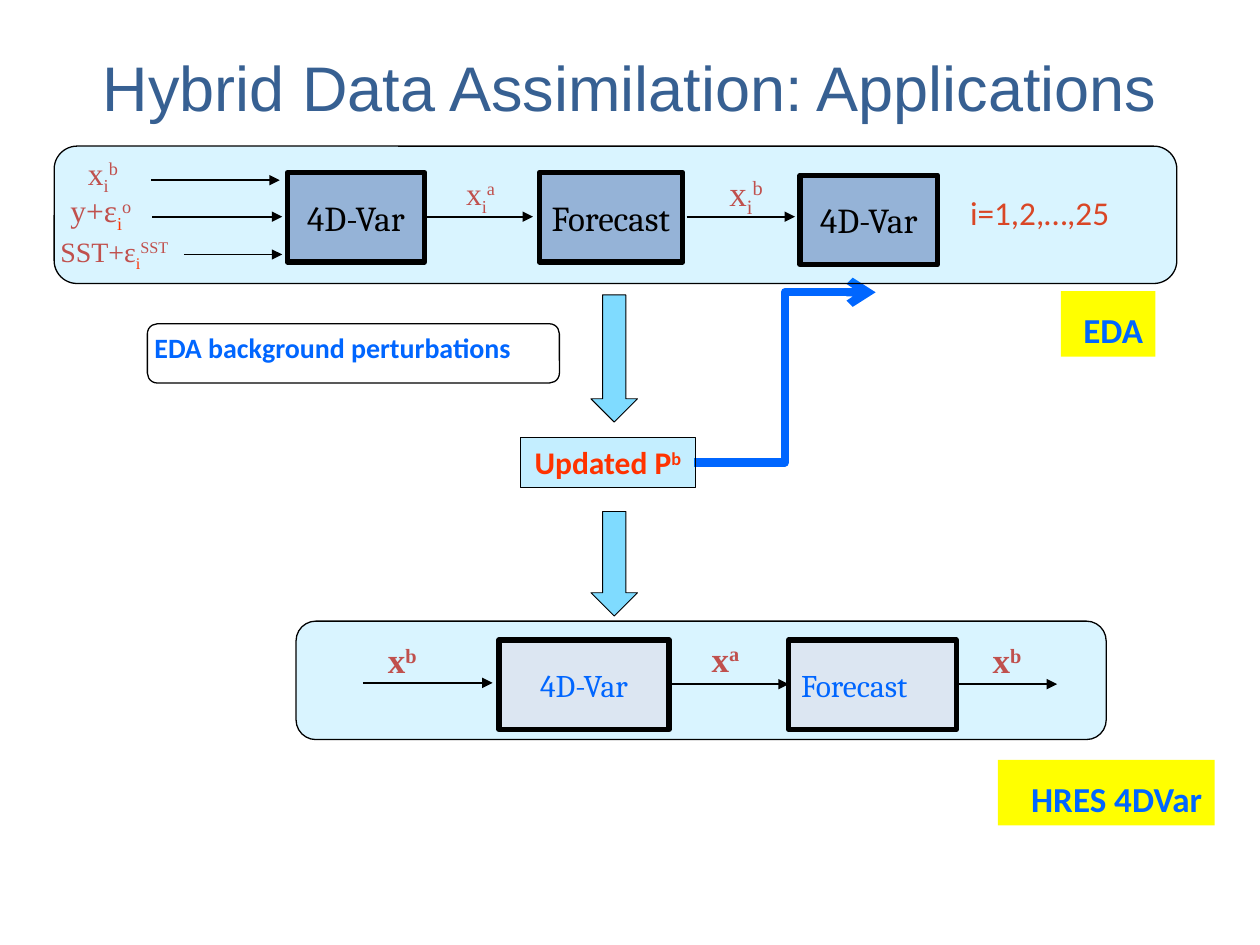
from dataclasses import dataclass

from lxml import etree
from pptx import Presentation
from pptx.dml.color import RGBColor
from pptx.enum.shapes import MSO_CONNECTOR, MSO_SHAPE
from pptx.enum.text import MSO_ANCHOR, PP_ALIGN
from pptx.oxml.ns import qn
from pptx.util import Inches, Pt

RECT, ROUNDED, DOWN = MSO_SHAPE.RECTANGLE, MSO_SHAPE.ROUNDED_RECTANGLE, MSO_SHAPE.DOWN_ARROW
STRAIGHT, ELBOW = MSO_CONNECTOR.STRAIGHT, MSO_CONNECTOR.ELBOW
LEFT, CENTER, RIGHT = PP_ALIGN.LEFT, PP_ALIGN.CENTER, PP_ALIGN.RIGHT
TOP, MIDDLE, BOTTOM = MSO_ANCHOR.TOP, MSO_ANCHOR.MIDDLE, MSO_ANCHOR.BOTTOM
SUB, SUP = -25, 30


@dataclass(frozen=True)
class Theme:
    title: str = "376092"
    black: str = "000000"
    blue: str = "0066FF"
    red: str = "FF3300"
    maroon: str = "C0504D"
    yellow: str = "FFFF00"
    cyan: str = "00B8FF"
    eda_box: str = "95B3D7"
    hres_box: str = "DCE6F2"
    title_font: str = "Arial"
    label_font: str = "Calibri"
    box_font: str = "Cambria"
    math_font: str = "Times New Roman"
    title_size: int = 36
    large: int = 20
    count_size: int = 19
    medium: int = 18
    small: int = 16


T = Theme()


def rgb(color):
    return RGBColor.from_string(color)


def write(sp, runs, size, font, color, bold=False, align=LEFT, anchor=TOP, wrap=False):
    """Fill a shape with runs: a string, or (text, baseline, colour) tuples."""
    if isinstance(runs, str):
        runs = [(runs, 0, color)]
    tf = sp.text_frame
    tf.word_wrap = wrap
    tf.vertical_anchor = anchor
    p = tf.paragraphs[0]
    p.alignment = align
    for text, baseline, run_color in runs:
        r = p.add_run()
        r.text = text
        r.font.size, r.font.name, r.font.bold = Pt(size), font, bold
        r.font.color.rgb = rgb(run_color)
        if baseline:
            r.font._element.set("baseline", str(baseline * 1000))


def add_label(s, at, runs, size, font, color, **style):
    write(s.shapes.add_textbox(*map(Inches, at)), runs, size, font, color, **style)


def add_symbol(s, at, base, sub="", sup="", size=T.medium, sub_color=T.maroon, **style):
    """Write a variable with its subscript and superscript."""
    parts = [(base, 0, T.maroon), (sub, SUB, sub_color), (sup, SUP, T.maroon)]
    add_label(s, at, [part for part in parts if part[0]], size, T.math_font, T.maroon, **style)


def add_block(s, kind, at, fill=None, alpha=100, line=None):
    sp = s.shapes.add_shape(kind, *map(Inches, at))
    sp.shadow.inherit = False
    if fill:
        sp.fill.solid()
        sp.fill.fore_color.rgb = rgb(fill)
        if alpha < 100:
            color = sp.fill._xPr.find(qn("a:solidFill"))[0]
            etree.SubElement(color, qn("a:alpha")).set("val", str(alpha * 1000))
    else:
        sp.fill.background()
    if line:
        sp.line.color.rgb = rgb(T.black)
        sp.line.width = Pt(line)
    else:
        sp.line.fill.background()
    return sp


def add_step(s, at, name, fill, size, color, align=CENTER):
    sp = add_block(s, RECT, at, fill, line=3)
    write(sp, name, size, T.box_font, color, align=align, anchor=MIDDLE)


def add_tag(s, at, name):
    sp = add_block(s, RECT, at, T.yellow)
    write(sp, name, T.large, T.label_font, T.blue, bold=True, align=RIGHT, anchor=BOTTOM)


def add_arrow(s, start, end, kind=STRAIGHT, color=T.black, width=1, head="triangle"):
    cx = s.shapes.add_connector(kind, *map(Inches, (*start, *end)))
    cx.line.color.rgb = rgb(color)
    cx.line.width = Pt(width)
    etree.SubElement(cx.line._get_or_add_ln(), qn("a:tailEnd")).set("type", head)
    etree.SubElement(cx._element.spPr, qn("a:effectLst"))


def add_title(s, text):
    sp = s.shapes.title
    sp.left, sp.top, sp.width, sp.height = map(Inches, (0.5, 0.3, 9, 0.77))
    write(sp, text, T.title_size, T.title_font, T.title, align=CENTER, anchor=MIDDLE, wrap=True)


def add_hres_cycle(s):
    add_block(s, ROUNDED, (2.35, 4.93, 6.43, 0.94), T.cyan, 15, 0.75)
    add_step(s, (3.96, 5.08, 1.35, 0.71), "4D-Var", T.hres_box, T.medium, T.blue)
    add_step(s, (6.26, 5.08, 1.33, 0.71), "Forecast", T.hres_box, T.medium, T.blue, LEFT)
    for x1, x2, y in ((2.88, 3.91, 5.42), (5.32, 6.26, 5.43), (7.58, 8.39, 5.43)):
        add_arrow(s, (x1, y), (x2, y))
    for x, y, sup in ((2.98, 5.02, "b"), (5.55, 5.01, "a"), (7.78, 5.02, "b")):
        add_symbol(s, (x, y, 0.45, 0.44), "x", sup=sup, size=T.large, bold=True)


def add_eda_cycle(s):
    add_label(s, (7.6, 1.48, 1.51, 0.42), "i=1,2,…,25", T.count_size, T.label_font, T.red)
    add_block(s, ROUNDED, (0.43, 1.16, 8.91, 1.09), T.cyan, 15, 0.75)
    for x, y, w, name, align in ((2.28, 1.37, 1.09, "4D-Var", CENTER),
                                 (4.28, 1.37, 1.14, "Forecast", LEFT),
                                 (6.35, 1.39, 1.09, "4D-Var", CENTER)):
        add_step(s, (x, y, w, 0.71), name, T.eda_box, T.large, T.black, align)
    for x1, x2, y in ((1.2, 2.22, 1.43), (1.21, 2.24, 1.72), (1.46, 2.24, 2.02),
                      (3.37, 4.23, 1.72), (5.45, 6.31, 1.72)):
        add_arrow(s, (x1, y), (x2, y))
    add_symbol(s, (0.6, 1.17, 0.46, 0.4), "x", "i", "b")
    add_symbol(s, (0.46, 1.47, 0.91, 0.4), "y+ε", "i", "o", sub_color=T.red, wrap=True)
    add_symbol(s, (0.38, 1.81, 1.31, 0.37), "SST+ε", "i", "SST", T.small, T.red, wrap=True)
    add_symbol(s, (3.6, 1.33, 0.45, 0.4), "x", "i", "a")
    add_symbol(s, (5.69, 1.31, 0.49, 0.44), "x", "i", "b", T.large)


def add_covariance_update(s):
    add_block(s, ROUNDED, (1.17, 2.57, 3.27, 0.47), line=0.75)
    add_label(s, (1.1, 2.57, 3.08, 0.38), "EDA background perturbations", T.small,
              T.label_font, T.blue, bold=True, align=CENTER, wrap=True)
    for y, h in ((2.34, 1.01), (4.06, 0.83)):
        add_block(s, DOWN, (4.69, y, 0.37, h), T.cyan, 50, 0.5)
    add_arrow(s, (5.51, 3.67), (6.95, 2.32), ELBOW, T.blue, 4.75, "arrow")
    sp = add_block(s, RECT, (4.13, 3.47, 1.39, 0.4), T.cyan, 23, 0.75)
    write(sp, [("Updated P", 0, T.red), ("b", SUP, T.red)], T.medium, T.label_font, T.red,
          bold=True, align=CENTER)


def main():
    prs = Presentation()
    prs.slide_width, prs.slide_height = Inches(10), Inches(7.5)
    s = prs.slides.add_slide(prs.slide_layouts[5])
    add_title(s, "Hybrid Data Assimilation: Applications")
    add_covariance_update(s)
    add_tag(s, (8.42, 2.31, 0.75, 0.52), "EDA")
    add_tag(s, (7.92, 6.03, 1.72, 0.52), "HRES 4DVar")
    add_hres_cycle(s)
    add_eda_cycle(s)
    prs.save("out.pptx")


if __name__ == "__main__":
    main()
